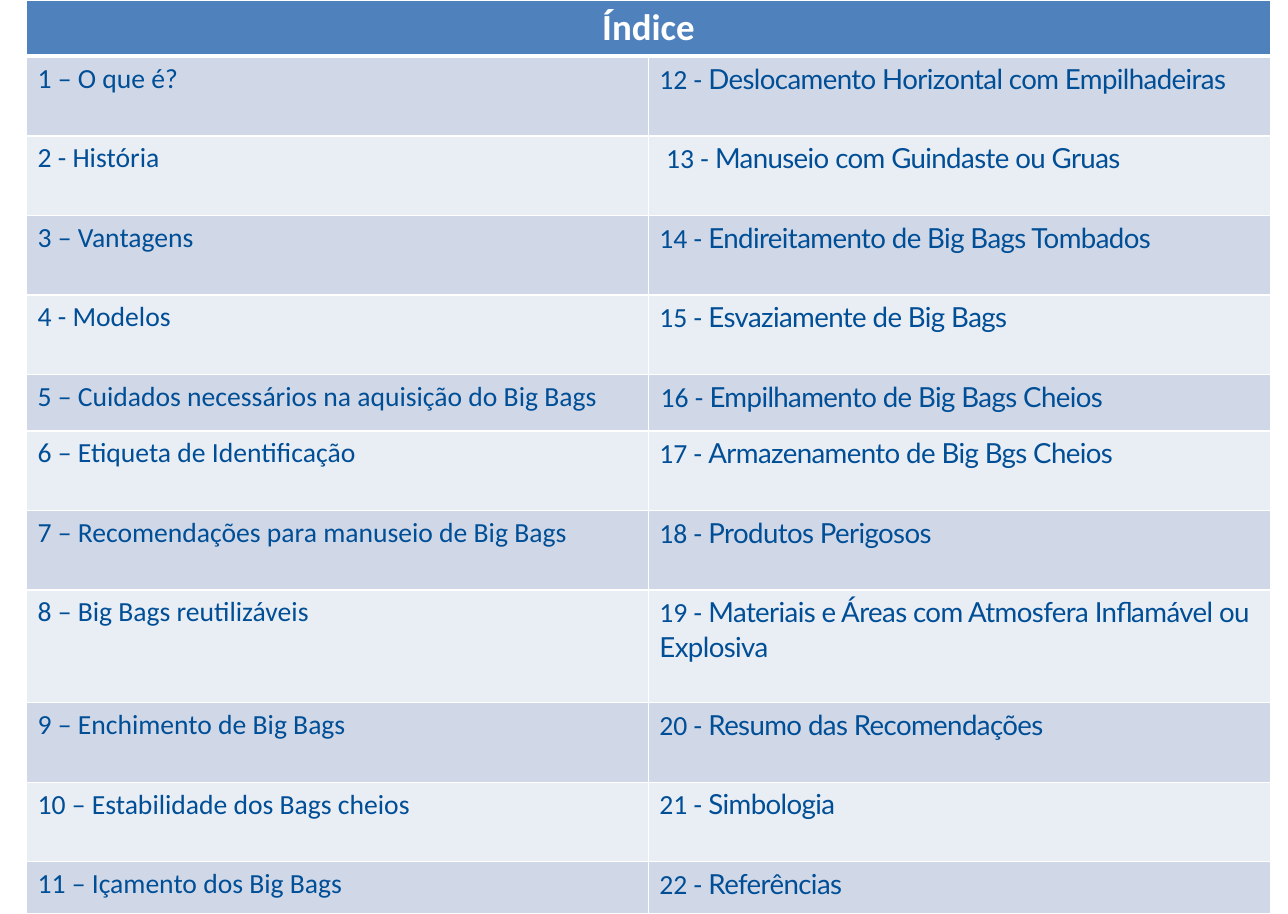
from lxml import etree
from pptx import Presentation
from pptx import util as u
from pptx.dml.color import RGBColor
from pptx.enum import text
from pptx.oxml import ns

WHITE, HEADER_BLUE, TEXT_BLUE = "FFFFFF", "4F81BD", "004E96"
BANDS = ("D0D8E8", "E9EDF4")
MARGIN = 0.1

# left topic, right number, right topic, row height, extra indent of the right cell
TOPICS = [
    ("1 – O que é?", "12 - ", "Deslocamento Horizontal com Empilhadeiras", 0.72, 0),
    ("2 - História", "13 - ", "Manuseio com Guindaste ou Gruas", 0.72, 0.06),
    ("3 – Vantagens", "14 - ", "Endireitamento de Big Bags Tombados", 0.72, 0),
    ("4 - Modelos", "15 - ", "Esvaziamente de Big Bags", 0.72, 0),
    ("5 – Cuidados necessários na aquisição do Big Bags", "16 - ",
     "Empilhamento de Big Bags Cheios", 0.51, 0.01),
    ("6 – Etiqueta de Identificação", "17 - ", "Armazenamento de Big Bgs Cheios", 0.72, 0),
    ("7 – Recomendações para manuseio de Big Bags", "18 - ", "Produtos Perigosos", 0.72, 0),
    ("8 – Big Bags reutilizáveis", "19 - ",
     "Materiais e Áreas com Atmosfera Inflamável ou Explosiva", 1.02, 0),
    ("9 – Enchimento de Big Bags", "20 - ", "Resumo das Recomendações", 0.72, 0),
    ("10 – Estabilidade dos Bags cheios", "21 - ", "Simbologia", 0.72, 0),
    ("11 – Içamento dos Big Bags", "22 - ", "Referências", 0.47, 0),
]
HEADER_HEIGHT = 0.51


def rgb(color):
    return RGBColor.from_string(color)


def add_run(paragraph, wording, size=18, color=TEXT_BLUE, font="Calibri", bold=False, spacing=0):
    """Add a run; spacing is the letter spacing in hundredths of a point."""
    run = paragraph.add_run()
    run.text = wording
    run.font.size = u.Pt(size)
    run.font.name = font
    run.font.bold = bold
    run.font.color.rgb = rgb(color)
    if spacing:
        run.font._element.set("spc", str(spacing))


def style_cell(cell, fill, top=1, bottom=1, indent=0):
    """Set white borders (widths in points), fill and left margin."""
    properties = cell._tc.get_or_add_tcPr()
    for side, width in (("L", 1), ("R", 1), ("T", top), ("B", bottom)):
        border = etree.SubElement(properties, ns.qn(f"a:ln{side}"), w=str(u.Pt(width)))
        paint = etree.SubElement(border, ns.qn("a:solidFill"))
        etree.SubElement(paint, ns.qn("a:srgbClr"), val=WHITE)
    cell.fill.solid()
    cell.fill.fore_color.rgb = rgb(fill)
    cell.margin_left = u.Inches(MARGIN + indent)


def add_header(index):
    for cell in index.rows[0].cells:
        style_cell(cell, HEADER_BLUE, bottom=3)
    heading = index.cell(0, 0)
    heading.merge(index.cell(0, 1))
    paragraph = heading.text_frame.paragraphs[0]
    paragraph.alignment = text.PP_ALIGN.CENTER
    add_run(paragraph, "Índice", size=24, color=WHITE, bold=True)


def add_index(slide, left, top, width):
    heights = [HEADER_HEIGHT] + [topic[3] for topic in TOPICS]
    index = slide.shapes.add_table(len(heights), 2, u.Inches(left), u.Inches(top),
                                   u.Inches(width), u.Inches(sum(heights))).table
    for row, height in zip(index.rows, heights):
        row.height = u.Inches(height)
    add_header(index)
    for number, (left_topic, prefix, right_topic, _, indent) in enumerate(TOPICS, 1):
        left_cell, right_cell = index.rows[number].cells
        band = BANDS[(number - 1) % 2]
        top_width = 3 if number == 1 else 1
        style_cell(left_cell, band, top=top_width)
        style_cell(right_cell, band, top=top_width, indent=indent)
        add_run(left_cell.text_frame.paragraphs[0], left_topic)
        right_paragraph = right_cell.text_frame.paragraphs[0]
        add_run(right_paragraph, prefix)
        add_run(right_paragraph, right_topic, font="Lato", spacing=-40)


def main():
    deck = Presentation()
    deck.slide_width, deck.slide_height = u.Inches(11.65), u.Inches(8.27)
    slide = deck.slides.add_slide(deck.slide_layouts[6])
    add_index(slide, 0.24, 0, 11.25)
    deck.save("out.pptx")


if __name__ == "__main__":
    main()
